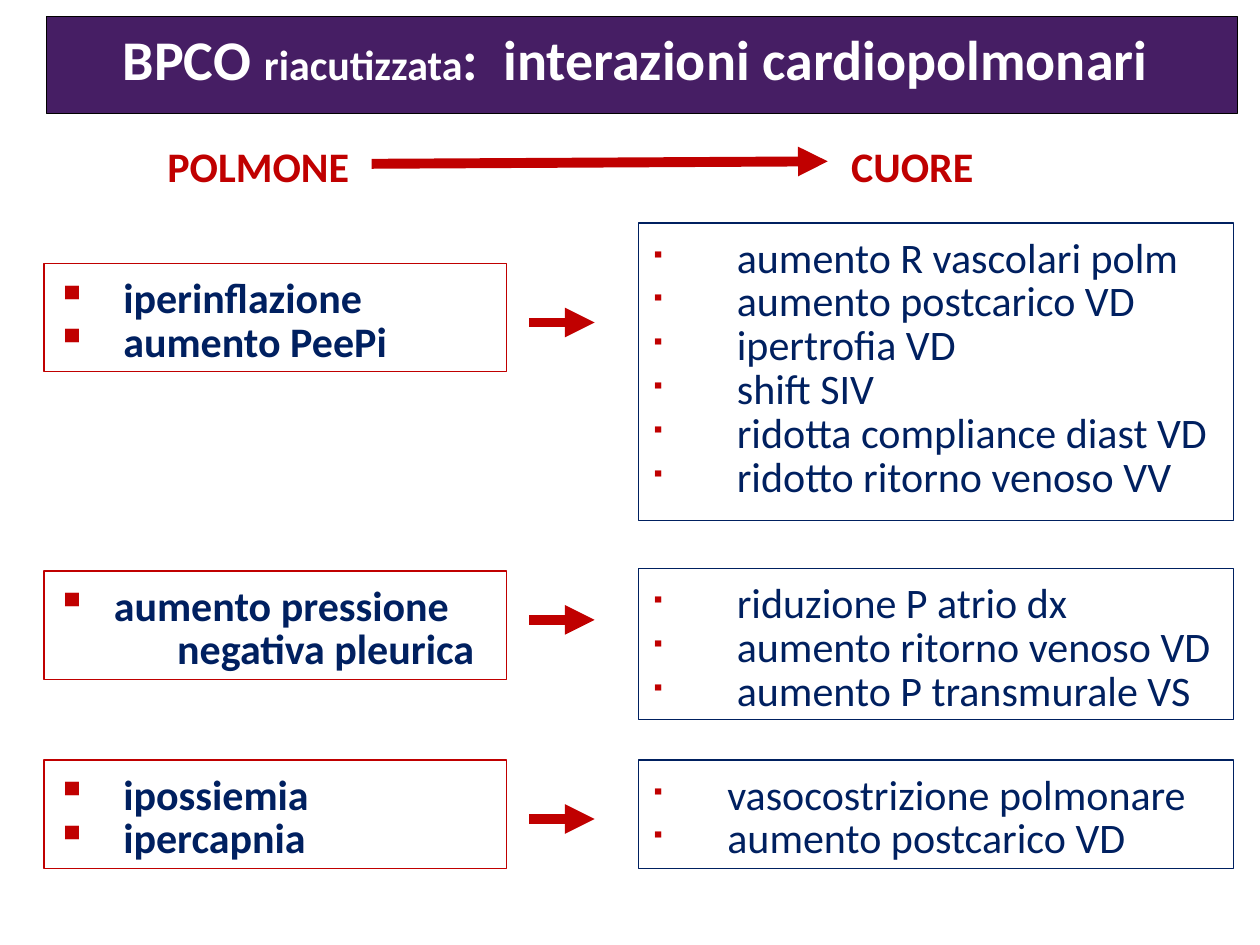
import pptx
import pptx.dml.color
import pptx.enum.shapes
import pptx.enum.text
import pptx.oxml
import pptx.oxml.ns
import pptx.util

Pt = pptx.util.Pt
COLORS = {"purple": "461E64", "red": "C00000", "navy": "002060", "white": "FFFFFF", "black": "000000"}
FONT = "Calibri"
LINE_SPACING = 0.87
HANGING = 27.4
SPACE = 5.4
LUNG_LEFT, LUNG_WIDTH, LUNG_HEIGHT = 25.2, 264.2, 62
HEART_LEFT, HEART_WIDTH = 365, 340
ARROW_START, ARROW_END = 302.4, 339.8

ROWS = [
    {
        "lung": (150.5, 2, ["iperinflazione", "aumento PeePi"]),
        "heart": (127.4, 170, 4, [
            "aumento R vascolari polm",
            "aumento postcarico VD",
            "ipertrofia VD",
            "shift SIV",
            "ridotta compliance diast VD",
            "ridotto ritorno venoso VV",
        ]),
        "arrow": 184.3,
    },
    {
        "lung": (326.2, 1, ["aumento pressione"]),
        "continuation": "negativa pleurica",
        "heart": (324.7, 86.4, 4, [
            "riduzione P atrio dx",
            "aumento ritorno venoso VD",
            "aumento P transmurale VS",
        ]),
        "arrow": 354.2,
    },
    {
        "lung": (434.2, 2, ["ipossiemia", "ipercapnia"]),
        "heart": (434.2, 62, 3, ["vasocostrizione polmonare", "aumento postcarico VD"]),
        "arrow": 468,
    },
]


def rgb(name):
    return pptx.dml.color.RGBColor.from_string(COLORS[name])


def add_child(parent, tag, **attributes):
    child = pptx.oxml.ns.qn(tag)
    element = parent.makeelement(child, attributes)
    parent.append(element)
    return element


def prepare_text(box, top_inset=8.64):
    frame = box.text_frame
    frame.word_wrap = True
    frame.vertical_anchor = pptx.enum.text.MSO_ANCHOR.TOP
    frame.margin_left = frame.margin_right = Pt(7.2)
    frame.margin_top = Pt(top_inset)
    frame.margin_bottom = Pt(3.6)
    return frame


def add_box(page, left, top, width, height, line, fill=None, top_inset=8.64):
    box = page.shapes.add_shape(
        pptx.enum.shapes.MSO_SHAPE.RECTANGLE, Pt(left), Pt(top), Pt(width), Pt(height))
    box.shadow.inherit = False
    if fill:
        box.fill.solid()
        box.fill.fore_color.rgb = rgb(fill)
    else:
        box.fill.background()
    box.line.color.rgb = rgb(line)
    box.line.width = Pt(0.75)
    return prepare_text(box, top_inset)


def add_para(frame, align=pptx.enum.text.PP_ALIGN.LEFT):
    para = frame.paragraphs[0]
    if para.runs:
        para = frame.add_paragraph()
    para.alignment = align
    para.line_spacing = LINE_SPACING
    return para


def add_span(para, text, color, size=24, bold=True):
    span = para.add_run()
    span.text = text
    span.font.name = FONT
    span.font.size = Pt(size)
    span.font.bold = bold
    span.font.color.rgb = rgb(color)


def indent(para, margin, first=0):
    properties = para._p.get_or_add_pPr()
    properties.set("marL", str(Pt(margin)))
    properties.set("indent", str(Pt(first)))
    return properties


def add_bullets(frame, items, spaces, bold, percent=100):
    margin = HANGING + SPACE * spaces
    for item in items:
        para = add_para(frame)
        properties = indent(para, margin, -margin)
        bullet_color = add_child(properties, "a:buClr")
        add_child(bullet_color, "a:srgbClr", val=COLORS["red"])
        add_child(properties, "a:buSzPct", val=str(percent * 1000))
        add_child(properties, "a:buChar", char="▪")
        add_span(para, item, "navy", bold=bold)


def add_arrow(page, start_x, start_y, end_x, end_y):
    arrow = page.shapes.add_connector(
        pptx.enum.shapes.MSO_CONNECTOR.STRAIGHT, Pt(start_x), Pt(start_y), Pt(end_x), Pt(end_y))
    arrow.line.color.rgb = rgb("red")
    arrow.line.width = Pt(5.67)
    add_child(arrow.line._get_or_add_ln(), "a:tailEnd", type="triangle")
    add_child(arrow._element.spPr, "a:effectLst")


def add_title(page):
    frame = add_box(page, 26.6, 9.4, 680.4, 55.4, "black", "purple", top_inset=10)
    para = add_para(frame, pptx.enum.text.PP_ALIGN.CENTER)
    for text, size in (("BPCO ", 32), ("riacutizzata", 24), (":  interazioni cardiopolmonari ", 32)):
        add_span(para, text, "white", size)


def add_heading(page, text, left, align):
    box = page.shapes.add_textbox(Pt(left), Pt(75.6), Pt(151.2), Pt(35))
    add_span(add_para(prepare_text(box), align), text, "red")


def add_row(page, row):
    top, spaces, items = row["lung"]
    frame = add_box(page, LUNG_LEFT, top, LUNG_WIDTH, LUNG_HEIGHT, "red")
    add_bullets(frame, items, spaces, True)
    if "continuation" in row:
        para = add_para(frame)
        indent(para, 69)
        add_span(para, row["continuation"], "navy")
    top, height, spaces, items = row["heart"]
    frame = add_box(page, HEART_LEFT, top, HEART_WIDTH, height, "navy")
    add_bullets(frame, items, spaces, False, 45)
    add_arrow(page, ARROW_START, row["arrow"], ARROW_END, row["arrow"])


def main():
    deck = pptx.Presentation()
    deck.slide_width, deck.slide_height = Pt(720), Pt(540)
    page = deck.slides.add_slide(deck.slide_layouts[6])
    add_title(page)
    add_heading(page, "POLMONE", 88.6, pptx.enum.text.PP_ALIGN.LEFT)
    add_heading(page, "CUORE", 445.7, pptx.enum.text.PP_ALIGN.CENTER)
    for row in ROWS:
        add_row(page, row)
    add_arrow(page, 212.4, 93.6, 473, 92.2)
    deck.save("out.pptx")


if __name__ == "__main__":
    main()
